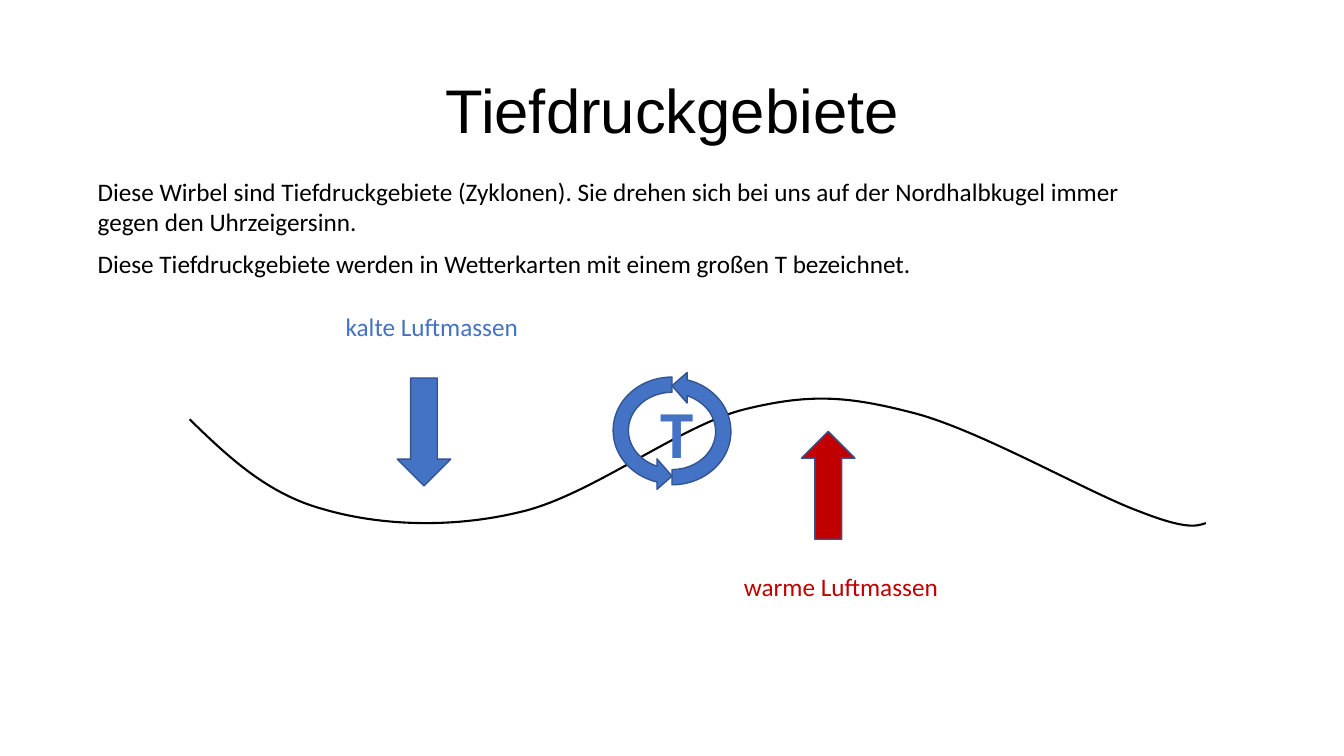
from dataclasses import dataclass

from lxml import etree
from pptx import Presentation
from pptx.dml.color import RGBColor
from pptx.enum.shapes import MSO_SHAPE
from pptx.enum.text import MSO_ANCHOR, MSO_AUTO_SIZE, PP_ALIGN
from pptx.oxml.ns import qn
from pptx.util import Inches, Pt

DOWN, UP, TURN = MSO_SHAPE.DOWN_ARROW, MSO_SHAPE.UP_ARROW, MSO_SHAPE.CIRCULAR_ARROW
MIDDLE, CENTER, FIT = MSO_ANCHOR.MIDDLE, PP_ALIGN.CENTER, MSO_AUTO_SIZE.SHAPE_TO_FIT_TEXT

COLORS = {"black": "000000", "cold": "4472C4", "warm": "C00000", "edge": "325491"}

# Start of the air front, then two control points and an end for each curve
FRONT = [
    (1.88, 4.16),
    (2.26, 4.53), (2.65, 4.9), (3.2, 5.05),
    (3.74, 5.21), (4.46, 5.25), (5.16, 5.08),
    (5.86, 4.92), (6.74, 4.22), (7.39, 4.06),
    (8.04, 3.9), (8.42, 3.93), (9.07, 4.1),
    (9.72, 4.27), (10.8, 4.89), (11.29, 5.07),
    (11.77, 5.26), (11.87, 5.22), (11.96, 5.19),
]


@dataclass
class Arrow:
    kind: MSO_SHAPE
    box: tuple[float, float, float, float]
    color: str
    turn: int = 0
    flip: bool = False


@dataclass
class Label:
    lines: list[str]
    box: tuple[float, float, float, float]
    color: str = "black"
    size: int = 18
    bold: bool = False
    wrap: bool = False


ARROWS = [
    Arrow(DOWN, (3.94, 3.75, 0.53, 1.07), "cold"),
    Arrow(UP, (7.95, 4.28, 0.53, 1.07), "warm"),
    Arrow(TURN, (6.06, 3.61, 1.21, 1.32), "cold", 270, True),
    Arrow(TURN, (6.06, 3.62, 1.21, 1.32), "cold", 90, True),
]

LABELS = [
    Label(["kalte Luftmassen"], (3.33, 3.04, 1.99, 0.4), "cold"),
    Label(["warme Luftmassen"], (7.28, 5.62, 2.21, 0.4), "warm"),
    Label(["Diese Wirbel sind Tiefdruckgebiete (Zyklonen). Sie drehen sich bei uns "
           "auf der Nordhalbkugel immer", "gegen den Uhrzeigersinn."],
          (0.87, 1.7, 10.52, 0.71)),
    Label(["T"], (6.45, 3.83, 0.44, 0.91), "cold", 48, True, True),
    Label(["Diese Tiefdruckgebiete werden in Wetterkarten mit einem großen T bezeichnet."],
          (0.87, 2.41, 8.37, 0.4)),
]


def paint(name: str) -> RGBColor:
    return RGBColor.from_string(COLORS[name])


def style(font, color: str, **form) -> None:
    font.color.rgb = paint(color)
    for key, value in form.items():
        setattr(font, key, value)


def outline(shape, color: str, width: float) -> None:
    shape.shadow.inherit = False
    shape.line.color.rgb = paint(color)
    shape.line.width = Pt(width)


def add_title(slide, text: str) -> None:
    title = slide.shapes.title
    box = {"left": 0.92, "top": 0.4, "width": 11.5, "height": 1.45}
    for key, value in box.items():
        setattr(title, key, Inches(value))
    frame = title.text_frame
    frame.text = text
    frame.vertical_anchor = MIDDLE
    para = frame.paragraphs[0]
    para.alignment = CENTER
    para.line_spacing = 0.9
    style(para.runs[0].font, "black", name="Arial", size=Pt(44))


def add_front(slide) -> None:
    """Draw the wave, joining each three path points into one Bezier curve."""
    points = [(Inches(x), Inches(y)) for x, y in FRONT]
    maker = slide.shapes.build_freeform(*points[0])
    maker.add_line_segments(points[1:], close=False)
    wave = maker.convert_to_shape()
    wave.fill.background()
    outline(wave, "black", 1.5)
    steps = list(wave.element.iter(qn("a:lnTo")))
    for start in range(0, len(steps), 3):
        trio = steps[start:start + 3]
        curve = etree.Element(qn("a:cubicBezTo"))
        trio[0].addprevious(curve)
        for step in trio:
            curve.append(step[0])
            step.getparent().remove(step)


def add_arrow(slide, arrow: Arrow) -> None:
    shape = slide.shapes.add_shape(arrow.kind, *map(Inches, arrow.box))
    shape.rotation = arrow.turn
    if arrow.flip:
        shape.element.spPr.xfrm.set("flipH", "1")
    shape.fill.solid()
    shape.fill.fore_color.rgb = paint(arrow.color)
    outline(shape, "edge", 1)


def add_label(slide, label: Label) -> None:
    frame = slide.shapes.add_textbox(*map(Inches, label.box)).text_frame
    frame.text = "\n".join(label.lines)
    frame.word_wrap = label.wrap
    frame.auto_size = FIT
    for para in frame.paragraphs:
        style(para.runs[0].font, label.color, name="Calibri",
              size=Pt(label.size), bold=label.bold)


def main() -> None:
    deck = Presentation()
    deck.slide_width, deck.slide_height = Inches(13.33), Inches(7.5)
    slide = deck.slides.add_slide(deck.slide_layouts[5])
    add_title(slide, "Tiefdruckgebiete")
    add_front(slide)
    for arrow in ARROWS:
        add_arrow(slide, arrow)
    for label in LABELS:
        add_label(slide, label)
    deck.save("out.pptx")


if __name__ == "__main__":
    main()
